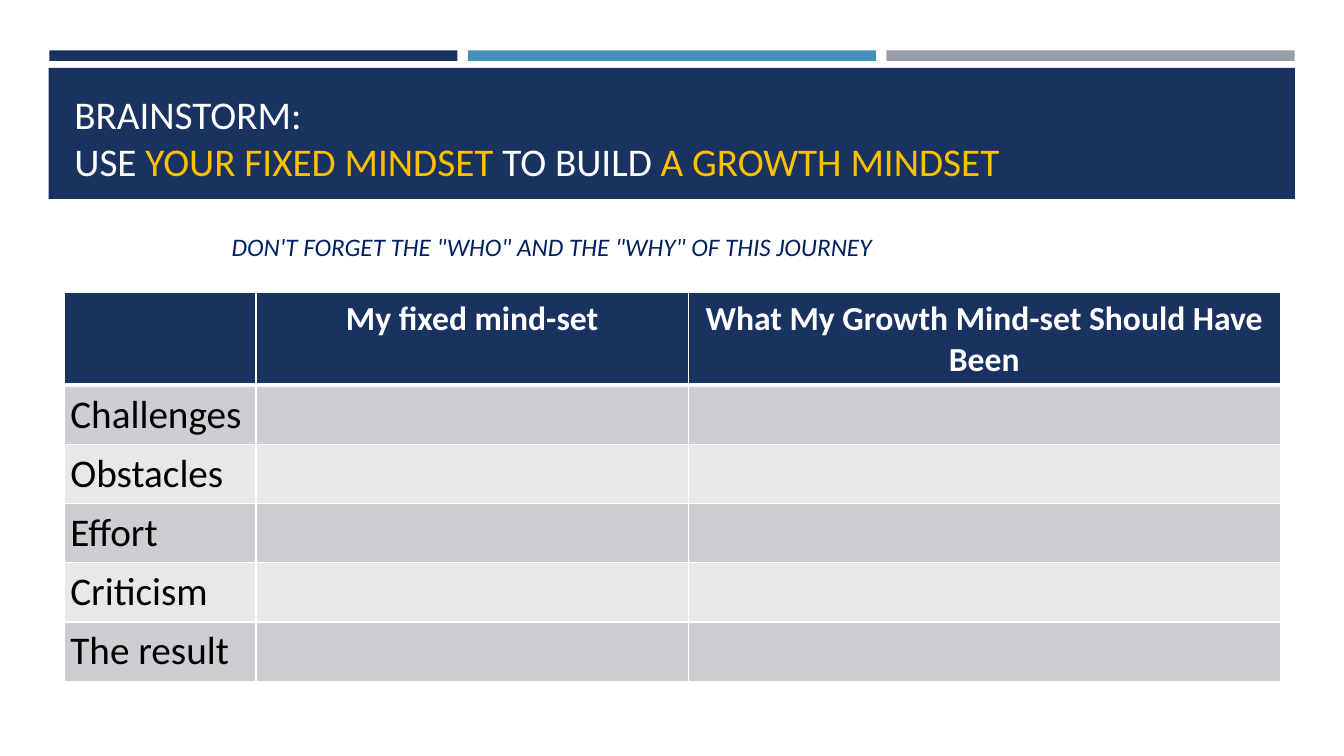
from dataclasses import dataclass

from lxml import etree
from pptx import Presentation
from pptx.dml.color import RGBColor
from pptx.enum.shapes import MSO_SHAPE
from pptx.enum.text import MSO_ANCHOR, PP_ALIGN
from pptx.oxml.ns import qn
from pptx.util import Pt

RECTANGLE = MSO_SHAPE.RECTANGLE
BOTTOM, TOP = MSO_ANCHOR.BOTTOM, MSO_ANCHOR.TOP
LEFT, CENTER = PP_ALIGN.LEFT, PP_ALIGN.CENTER


@dataclass(frozen=True)
class Theme:
    font: str = "Calibri"
    navy: str = "1A3260"
    blue: str = "4590B8"
    gray: str = "969FA7"
    gold: str = "FFC000"
    white: str = "FFFFFF"
    black: str = "000000"
    reminder: str = "002060"
    bands: tuple = ("CDCED2", "E8E8EA")
    large: int = 28
    heading: int = 24
    small: int = 18


THEME = Theme()

TITLE_LINES = [
    [("BRAINSTORM:", THEME.white)],
    [
        ("USE ", THEME.white),
        ("YOUR FIXED MINDSET", THEME.gold),
        (" TO BUILD ", THEME.white),
        ("A GROWTH MINDSET", THEME.gold),
    ],
]
REMINDER = 'DON\'T FORGET THE "WHO" AND THE "WHY" OF THIS JOURNEY'
HEADINGS = ["", "My fixed mind-set", "What My Growth Mind-set Should Have Been"]
TOPICS = ["Challenges", "Obstacles", "Effort", "Criticism", "The result"]

PAGE_SIZE = (960, 540)
BAR_COLORS = [THEME.navy, THEME.blue, THEME.gray]
BAR_LEFT, BAR_TOP, BAR_WIDTH, BAR_HEIGHT, BAR_GAP = 35.2, 36, 291.6, 7.5, 7.4
BANNER = (34.8, 48.5, 890.2, 93.6)
TITLE_BOX = (46.1, 55.4, 868.3, 79.9)
REMINDER_BOX = (158.4, 162, 643, 29)
TABLE_LEFT, TABLE_TOP = 46.3, 209.1
COLUMN_WIDTHS = [136.6, 308.8, 422.8]
HEADER_HEIGHT, ROW_HEIGHT, CELL_MARGIN = 66, 42.3, 4


def place(left, top, width, height):
    return Pt(left), Pt(top), Pt(width), Pt(height)


def add_block(page, area, color):
    block = page.shapes.add_shape(RECTANGLE, *place(*area))
    block.shadow.inherit = False
    block.fill.solid()
    block.fill.fore_color.rgb = RGBColor.from_string(color)
    block.line.fill.background()


def add_span(para, text, size, color, bold=False, italic=False):
    span = para.add_run()
    span.text = text
    span.font.name = THEME.font
    span.font.size = Pt(size)
    span.font.color.rgb = RGBColor.from_string(color)
    span.font.bold = bold
    span.font.italic = italic


def add_text_box(page, area, anchor):
    box = page.shapes.add_textbox(*place(*area))
    box.text_frame.word_wrap = True
    box.text_frame.vertical_anchor = anchor
    return box.text_frame.paragraphs[0]


def set_borders(cell, bottom_width):
    properties = cell._tc.get_or_add_tcPr()
    widths = {"a:lnL": 1, "a:lnR": 1, "a:lnT": 1, "a:lnB": bottom_width}
    for position, (side, width) in enumerate(widths.items()):
        line = etree.Element(qn(side), w=str(Pt(width)))
        fill = etree.SubElement(line, qn("a:solidFill"))
        etree.SubElement(fill, qn("a:srgbClr"), val=THEME.white)
        properties.insert(position, line)


def fill_cell(cell, text, fill, size, color, bold, align, bottom_width):
    cell.fill.solid()
    cell.fill.fore_color.rgb = RGBColor.from_string(fill)
    cell.margin_left = cell.margin_right = Pt(CELL_MARGIN)
    cell.margin_top = cell.margin_bottom = Pt(CELL_MARGIN)
    para = cell.text_frame.paragraphs[0]
    para.alignment = align
    if text:
        add_span(para, text, size, color, bold=bold)
    set_borders(cell, bottom_width)


def add_mindset_table(page):
    rows = [HEADINGS] + [[topic, "", ""] for topic in TOPICS]
    heights = [HEADER_HEIGHT] + [ROW_HEIGHT] * len(TOPICS)
    area = (TABLE_LEFT, TABLE_TOP, sum(COLUMN_WIDTHS), sum(heights))
    table = page.shapes.add_table(len(rows), len(HEADINGS), *place(*area)).table
    for column, width in zip(table.columns, COLUMN_WIDTHS):
        column.width = Pt(width)
    for index, (texts, height) in enumerate(zip(rows, heights)):
        table.rows[index].height = Pt(height)
        if index == 0:
            look = (THEME.navy, THEME.heading, THEME.white, True, CENTER, 3)
        else:
            band = THEME.bands[(index - 1) % 2]
            look = (band, THEME.large, THEME.black, False, LEFT, 1)
        for cell, text in zip(table.rows[index].cells, texts):
            fill_cell(cell, text, *look)


def main():
    deck = Presentation()
    deck.slide_width, deck.slide_height = map(Pt, PAGE_SIZE)
    page = deck.slides.add_slide(deck.slide_layouts[6])

    for index, color in enumerate(BAR_COLORS):
        left = BAR_LEFT + index * (BAR_WIDTH + BAR_GAP)
        add_block(page, (left, BAR_TOP, BAR_WIDTH, BAR_HEIGHT), color)
    add_block(page, BANNER, THEME.navy)

    para = add_text_box(page, TITLE_BOX, BOTTOM)
    for index, line in enumerate(TITLE_LINES):
        if index:
            para.add_line_break()
        for text, color in line:
            add_span(para, text, THEME.large, color)

    add_mindset_table(page)

    para = add_text_box(page, REMINDER_BOX, TOP)
    add_span(para, REMINDER, THEME.small, THEME.reminder, italic=True)

    deck.save("out.pptx")


if __name__ == "__main__":
    main()
